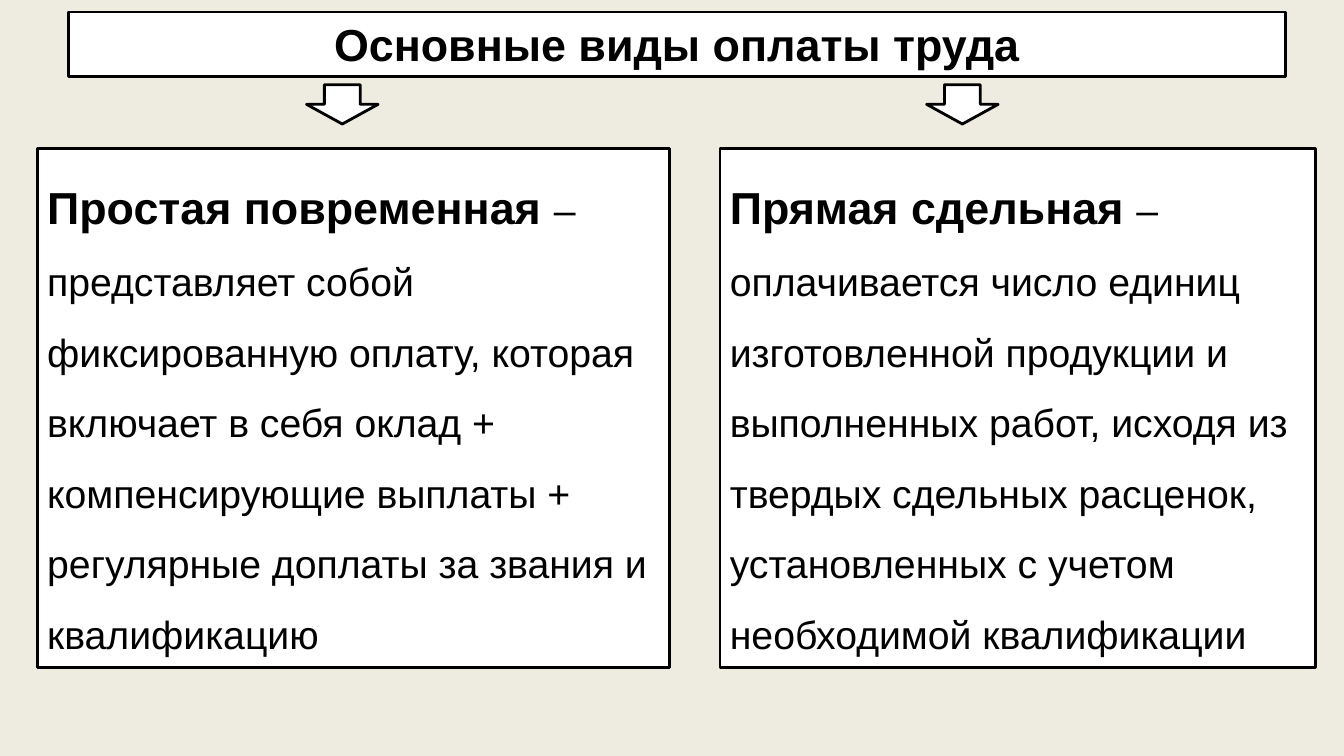
from pptx import Presentation
from pptx.dml.color import RGBColor
from pptx.enum.shapes import MSO_SHAPE as Shape
from pptx.enum.text import MSO_ANCHOR as Anchor, MSO_AUTO_SIZE as AutoSize, PP_ALIGN as Align
from pptx.util import Inches, Pt

BLACK, WHITE, CREAM = "000000", "FFFFFF", "EEECE1"
ARROW_WIDTH, ARROW_HEIGHT = 0.71, 0.39


def paint(fill, color):
    """Give a fill one solid colour."""
    fill.solid()
    fill.fore_color.rgb = RGBColor.from_string(color)


def add_outlined(slide, kind, left, top, width, height):
    """Add a white shape with a black outline."""
    shape = slide.shapes.add_shape(
        kind, Inches(left), Inches(top), Inches(width), Inches(height))
    shape.shadow.inherit = False
    paint(shape.fill, WHITE)
    paint(shape.line.fill, BLACK)
    shape.line.width = Pt(2)
    return shape


def add_text_box(slide, box, runs, align, line_spacing):
    """Add an outlined rectangle with one paragraph of (text, size, bold) runs."""
    shape = add_outlined(slide, Shape.RECTANGLE, *box)
    frame = shape.text_frame
    frame.word_wrap = True
    frame.auto_size = AutoSize.SHAPE_TO_FIT_TEXT
    frame.vertical_anchor = Anchor.TOP
    paragraph = frame.paragraphs[0]
    paragraph.alignment = align
    paragraph.line_spacing = line_spacing
    for text, size, bold in runs:
        run = paragraph.add_run()
        run.text = text
        run.font.name = "Arial"
        run.font.size = Pt(size)
        run.font.bold = bold
        run.font.color.rgb = RGBColor.from_string(BLACK)


def add_title(slide, box, text):
    """Add the heading bar."""
    add_text_box(slide, box, [(text, 32, True)], Align.CENTER, 1.0)


def add_payment_type(slide, box, arrow_left, term, definition):
    """Add a definition panel and the arrow that leads down to it."""
    arrow_top = box[1] - 0.63
    add_outlined(slide, Shape.DOWN_ARROW, arrow_left, arrow_top, ARROW_WIDTH, ARROW_HEIGHT)
    runs = [(term + " ", 32, True), ("– " + definition, 28, False)]
    add_text_box(slide, box, runs, Align.LEFT, 1.5)


def main():
    """Build the slide and save it."""
    presentation = Presentation()
    presentation.slide_width = Inches(13.33)
    presentation.slide_height = Inches(7.5)
    slide = presentation.slides.add_slide(presentation.slide_layouts[6])
    paint(slide.background.fill, CREAM)
    add_title(slide, (0.68, 0.12, 12.07, 0.64), "Основные виды оплаты труда")
    add_payment_type(
        slide, (0.37, 1.47, 6.27, 5.15), 3.04, "Простая повременная",
        "представляет собой фиксированную оплату, которая включает в себя оклад + "
        "компенсирующие выплаты + регулярные доплаты за звания и квалификацию")
    add_payment_type(
        slide, (7.14, 1.47, 5.91, 5.15), 9.19, "Прямая сдельная",
        "оплачивается число единиц изготовленной продукции и выполненных работ, "
        "исходя из твердых сдельных расценок, установленных с учетом "
        "необходимой квалификации")
    presentation.save("out.pptx")


if __name__ == "__main__":
    main()
